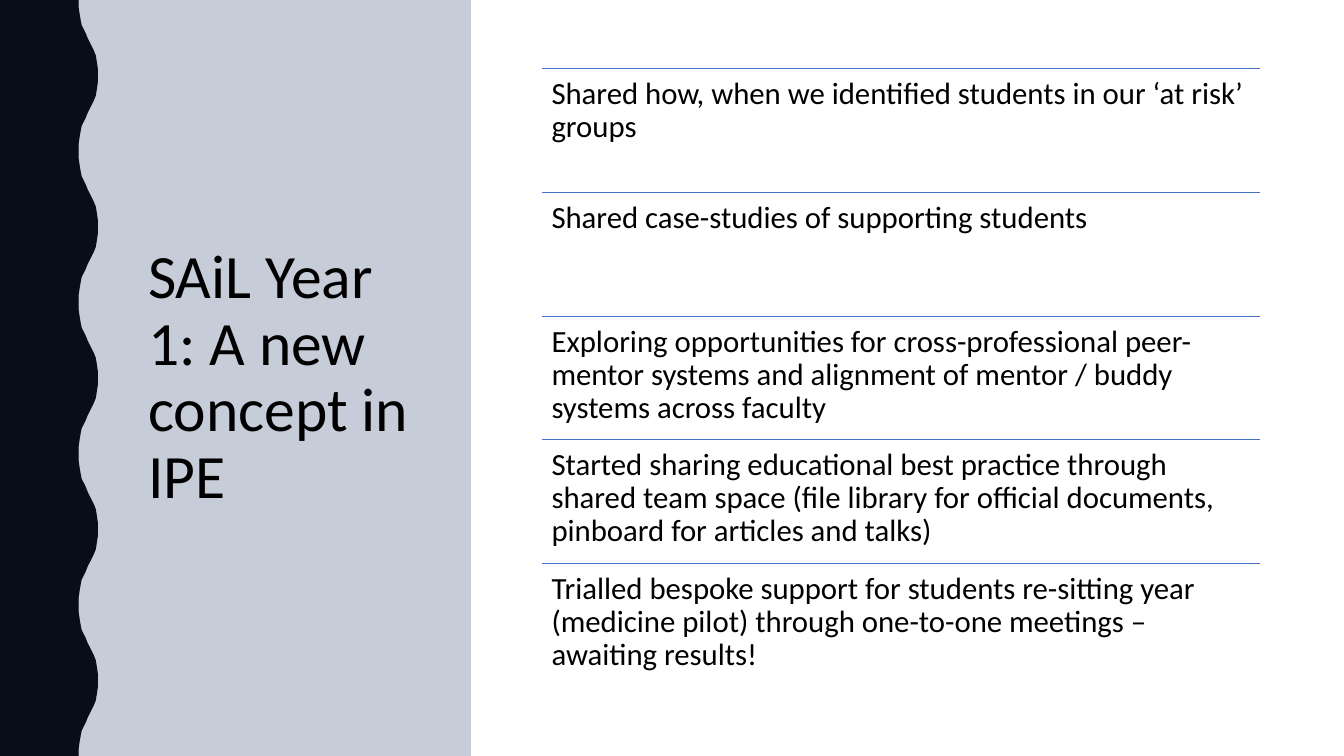
from lxml import etree
from pptx import Presentation
from pptx import util as u
from pptx.dml.color import RGBColor
from pptx.enum import shapes, text
from pptx.oxml.ns import qn

TITLE = "SAiL Year 1: A new concept in IPE"
POINTS = [
    "Shared how, when we identified students in our ‘at risk’ groups",
    "Shared case-studies of supporting students",
    "Exploring opportunities for cross-professional peer-mentor systems and "
    "alignment of mentor / buddy systems across faculty",
    "Started sharing educational best practice through shared team space "
    "(file library for official documents, pinboard for articles and talks)",
    "Trialled bespoke support for students re-sitting year (medicine pilot) "
    "through one-to-one meetings – awaiting results!",
]
FONT = "Calibri"
WHITE, BLACK, NAVY, BLUE = "FFFFFF", "000000", "203864", "4472C4"
TINT = 25

PX = 9144
SLIDE_WIDTH, SLIDE_HEIGHT = 1333, 750
PANEL_WIDTH = 467
TITLE_BOX = (137, 68, 290, 615)
LIST_LEFT, LIST_TOP, LIST_WIDTH, LIST_HEIGHT = 538, 68, 712, 614
WAVE_COUNT, WAVE_PERIOD = 5, 150
HALF_WAVE = [
    (78, 0), (78, 7), (79, 14), (80, 20), (81, 25), (83, 29), (85, 33), (87, 38),
    (89, 42), (91, 46), (93, 50), (95, 55), (96, 61), (97, 68), (97, 75),
]


def px(length):
    return u.Emu(length * PX)


def color(hex_string):
    return RGBColor.from_string(hex_string)


def paint(shape, fill, opacity=100):
    shape.shadow.inherit = False
    shape.line.fill.background()
    shape.fill.solid()
    shape.fill.fore_color.rgb = color(fill)
    if opacity < 100:
        tone = shape.fill._xPr.find(qn("a:solidFill"))[0]
        etree.SubElement(tone, qn("a:alpha"), val=str(opacity * 1000))


def add_text(slide, box, content, size, anchor, inset_x, inset_y):
    shape = slide.shapes.add_textbox(*map(px, box))
    frame = shape.text_frame
    frame.word_wrap = True
    frame.vertical_anchor = anchor
    frame.margin_left = frame.margin_right = px(inset_x)
    frame.margin_top = frame.margin_bottom = px(inset_y)
    frame.text = content
    paragraph = frame.paragraphs[0]
    paragraph.line_spacing = 0.9
    font = paragraph.runs[0].font
    font.name, font.size, font.color.rgb = FONT, u.Pt(size), color(BLACK)


def add_rule(slide, left, top, width):
    rule = slide.shapes.add_connector(
        shapes.MSO_CONNECTOR.STRAIGHT, px(left), px(top), px(left + width), px(top))
    rule.line.color.rgb = color(BLUE)
    rule.line.width = u.Pt(1)
    etree.SubElement(rule._element.spPr, qn("a:effectLst"))


def wave_outline():
    mirrored = [(x, WAVE_PERIOD - y) for x, y in reversed(HALF_WAVE[:-1])]
    wave = HALF_WAVE + mirrored[:-1]
    edge = [(x, y + WAVE_PERIOD * i) for i in range(WAVE_COUNT) for x, y in wave]
    return edge + [(HALF_WAVE[0][0], SLIDE_HEIGHT), (0, SLIDE_HEIGHT)]


def main():
    presentation = Presentation()
    presentation.slide_width = px(SLIDE_WIDTH)
    presentation.slide_height = px(SLIDE_HEIGHT)
    slide = presentation.slides.add_slide(presentation.slide_layouts[6])

    for fill, opacity in ((WHITE, 100), (NAVY, TINT)):
        panel = slide.shapes.add_shape(
            shapes.MSO_SHAPE.RECTANGLE, 0, 0, px(PANEL_WIDTH), px(SLIDE_HEIGHT))
        paint(panel, fill, opacity)

    add_text(slide, TITLE_BOX, TITLE, 44, text.MSO_ANCHOR.MIDDLE, 10, 5)

    for fill, opacity in ((BLACK, 100), (NAVY, TINT)):
        builder = slide.shapes.build_freeform(0, 0, scale=PX)
        builder.add_line_segments(wave_outline(), close=True)
        paint(builder.convert_to_shape(), fill, opacity)

    row_height = LIST_HEIGHT / len(POINTS)
    for i, point in enumerate(POINTS):
        top = round(LIST_TOP + i * row_height)
        add_rule(slide, LIST_LEFT, top, LIST_WIDTH)
        box = (LIST_LEFT, top, LIST_WIDTH, round(row_height))
        add_text(slide, box, point, 22, text.MSO_ANCHOR.TOP, 9, 9)

    presentation.save("out.pptx")


if __name__ == "__main__":
    main()
